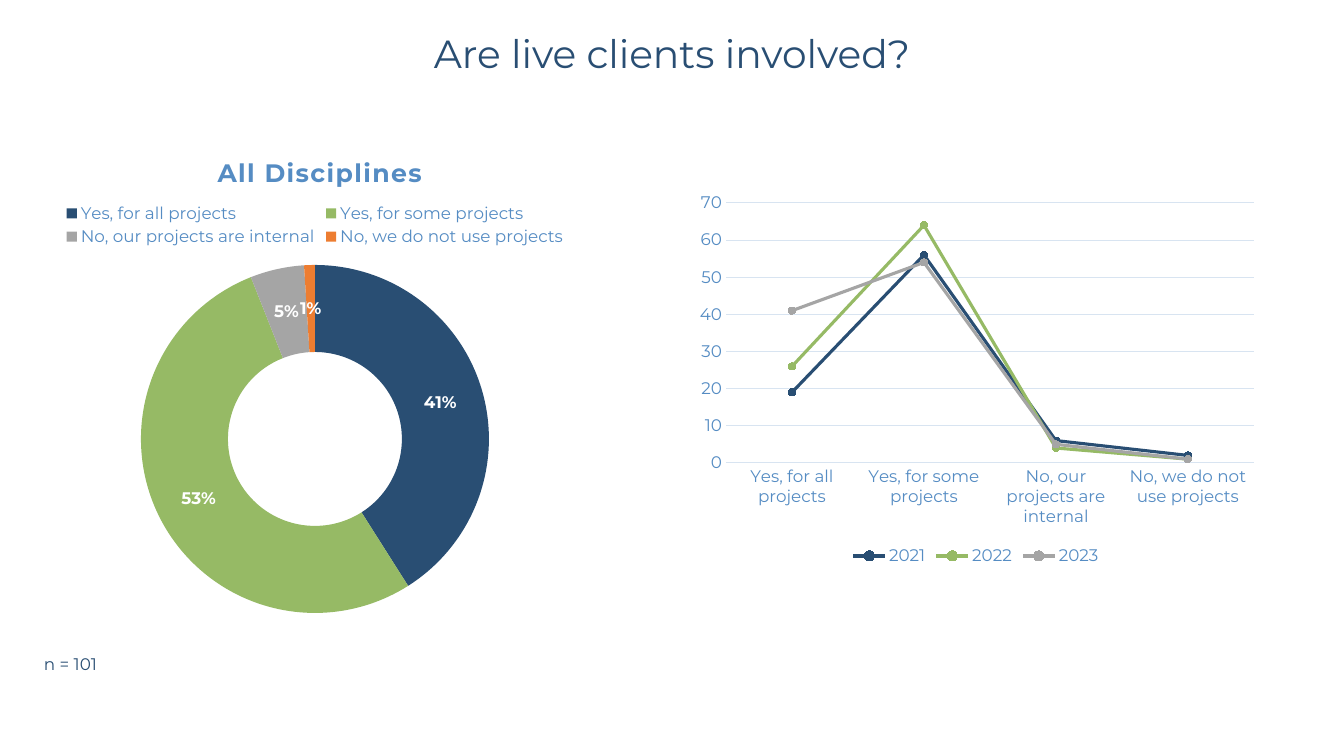
import pptx
import pptx.chart.data
import pptx.dml.color
import pptx.enum.chart
import pptx.enum.text
import pptx.oxml
import pptx.oxml.ns
import pptx.util

COLORS = {"navy": "294E73", "green": "96BA65", "gray": "A5A5A5",
          "orange": "ED7D31", "blue": "558CC3", "grid": "D8E4F1", "white": "FFFFFF"}
FONT = "Montserrat"
SLIDE = (1344, 756)

ANSWERS = ["Yes, for all projects", "Yes, for some projects",
           "No, our projects are internal", "No, we do not use projects"]
SHARES = [41, 53, 5, 1]
SHARE_COLORS = ["navy", "green", "gray", "orange"]
YEARS = [("2021", [19, 56, 6, 2], "navy"),
         ("2022", [26, 64, 4, 1], "green"),
         ("2023", [41, 54, 5, 1], "gray")]

# text, box in px, size in pt, alignment
TEXTS = [("n = 101", (34, 649, 81, 30), 12, pptx.enum.text.PP_ALIGN.LEFT),
         ("Are live clients involved?", (222, 24, 900, 57), 28, pptx.enum.text.PP_ALIGN.CENTER)]

# boxes in px on the slide: left, top, width, height
DONUT = (-58, 129, 747, 498)
DONUT_TITLE = (213, 151, 203, 34)
DONUT_LEGEND = (61, 200, 508, 50)
DONUT_RING = (141, 265, 348, 348)
LINES = (687, 185, 578, 385)
LINES_PLOT = (726, 203, 528, 260)


def px(n):
    return round(n * 914400 / 100.8)


def rgb(name):
    return pptx.dml.color.RGBColor.from_string(COLORS[name])


def style(font, size, color, bold=False):
    font.name, font.size, font.bold = FONT, pptx.util.Pt(size), bold
    font.color.rgb = rgb(color)


def fill(fmt, color):
    fmt.fill.solid()
    fmt.fill.fore_color.rgb = rgb(color)


def rule(line, color, width):
    line.color.rgb = rgb(color)
    line.width = pptx.util.Pt(width)


def place(element, box, frame, after=None, inner=False):
    """Give a chart part a manual layout, as fractions of the chart frame."""
    for old in element.findall(pptx.oxml.ns.qn("c:layout")):
        element.remove(old)
    x, y, w, h = box
    left, top, width, height = frame
    parts = {"x": (x - left) / width, "y": (y - top) / height,
             "w": w / width, "h": h / height}
    target = '<c:layoutTarget val="inner"/>' if inner else ""
    modes = '<c:xMode val="edge"/><c:yMode val="edge"/>'
    values = "".join(f'<c:{k} val="{v:.4f}"/>' for k, v in parts.items())
    layout = pptx.oxml.parse_xml(
        f'<c:layout {pptx.oxml.ns.nsdecls("c")}><c:manualLayout>'
        f'{target}{modes}{values}</c:manualLayout></c:layout>')
    if after is None:
        element.insert(0, layout)
    else:
        after.addnext(layout)


def add_chart(s, kind, series, frame, plot_box, legend_position):
    data = pptx.chart.data.CategoryChartData()
    data.categories = ANSWERS
    for name, values in series:
        data.add_series(name, values)
    chart = s.shapes.add_chart(kind, *map(px, frame), data).chart
    style(chart.font, 10, "navy")
    chart.has_legend = True
    chart.legend.position = legend_position
    chart.legend.include_in_layout = False
    style(chart.legend.font, 12, "blue")
    place(chart.element.chart.plotArea, plot_box, frame, inner=True)
    return chart


def add_donut(s):
    chart = add_chart(s, pptx.enum.chart.XL_CHART_TYPE.DOUGHNUT, [("Series 1", SHARES)],
                      DONUT, DONUT_RING, pptx.enum.chart.XL_LEGEND_POSITION.TOP)
    legend = chart.legend.element if hasattr(chart.legend, "element") else \
        chart.element.find(".//" + pptx.oxml.ns.qn("c:legend"))
    place(legend, DONUT_LEGEND, DONUT, legend.find(pptx.oxml.ns.qn("c:legendPos")))

    chart.has_title = True
    p = chart.chart_title.text_frame.paragraphs[0]
    p.text = "All Disciplines"
    style(p.runs[0].font, 18, "blue", True)
    p.runs[0].font.fill.solid()
    p.runs[0].font.color.rgb = rgb("blue")
    title = chart.element.find(".//" + pptx.oxml.ns.qn("c:title"))
    title.find(".//" + pptx.oxml.ns.qn("a:rPr")).set("spc", "100")
    place(title, DONUT_TITLE, DONUT, title.find(pptx.oxml.ns.qn("c:tx")))

    plot = chart.plots[0]
    plot.vary_by_categories = True
    for i, color in enumerate(SHARE_COLORS):
        fill(plot.series[0].points[i].format, color)
    plot.has_data_labels = True
    labels = plot.data_labels
    labels.show_percentage, labels.show_value = True, False
    labels.number_format, labels.number_format_is_linked = "0%", False
    style(labels.font, 12, "white", True)


def add_lines(s):
    chart = add_chart(s, pptx.enum.chart.XL_CHART_TYPE.LINE_MARKERS,
                      [(name, values) for name, values, _ in YEARS],
                      LINES, LINES_PLOT, pptx.enum.chart.XL_LEGEND_POSITION.BOTTOM)
    chart.has_title = False
    chart.plots[0].vary_by_categories = False
    for series, (_, _, color) in zip(chart.plots[0].series, YEARS):
        series.smooth = False
        rule(series.format.line, color, 2.25)
        series.marker.style = pptx.enum.chart.XL_MARKER_STYLE.CIRCLE
        series.marker.size = 5
        fill(series.marker.format, color)
        rule(series.marker.format.line, color, 0.75)
    for axis in (chart.category_axis, chart.value_axis):
        axis.major_tick_mark = axis.minor_tick_mark = pptx.enum.chart.XL_TICK_MARK.NONE
        style(axis.tick_labels.font, 12, "blue")
    rule(chart.category_axis.format.line, "grid", 0.75)
    values = chart.value_axis
    values.minimum_scale, values.maximum_scale, values.major_unit = 0, 70, 10
    values.format.line.fill.background()
    values.has_major_gridlines = True
    rule(values.major_gridlines.format.line, "grid", 0.75)


def add_text(s, text, box, size, align):
    tf = s.shapes.add_textbox(*map(px, box)).text_frame
    tf.word_wrap = True
    p = tf.paragraphs[0]
    p.text = text
    p.alignment = align
    style(p.runs[0].font, size, "navy")


def main():
    prs = pptx.Presentation()
    prs.slide_width, prs.slide_height = map(px, SLIDE)
    s = prs.slides.add_slide(prs.slide_layouts[6])
    for item in TEXTS:
        add_text(s, *item)
    add_donut(s)
    add_lines(s)
    prs.save("out.pptx")


if __name__ == "__main__":
    main()
